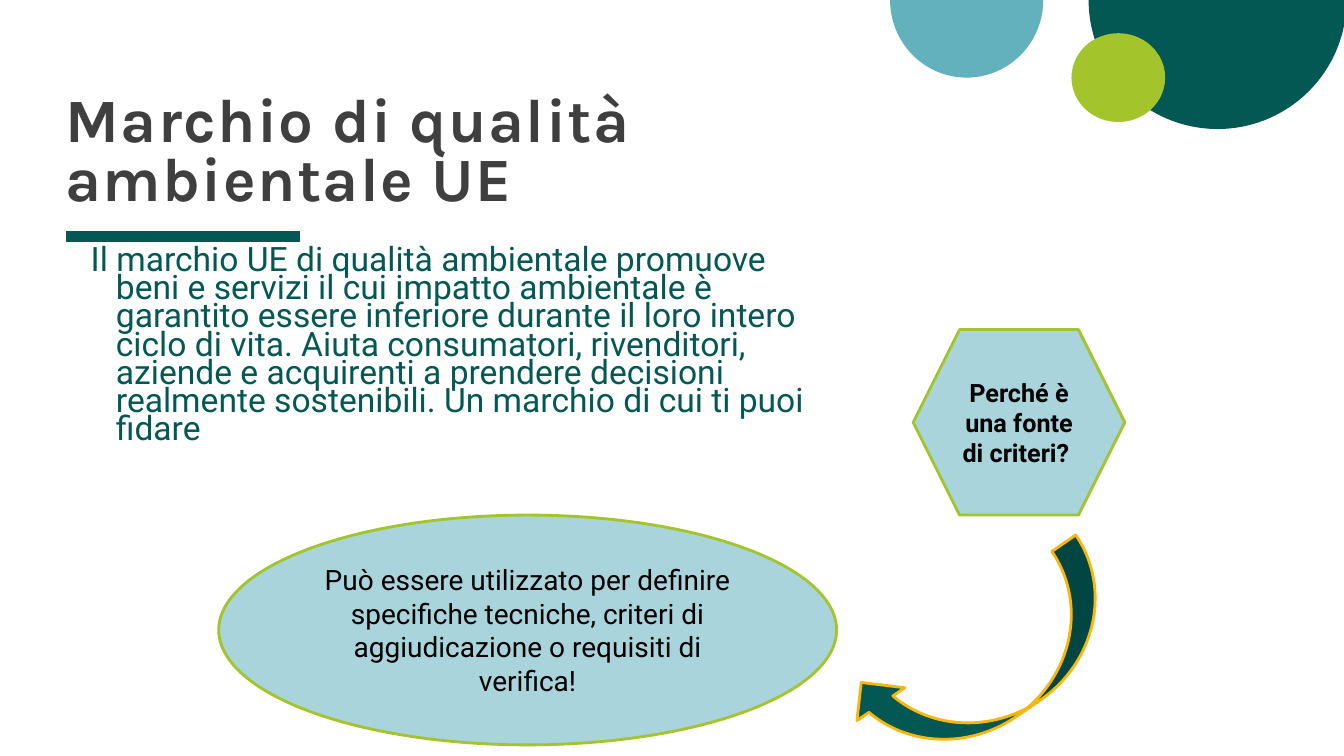
from typing import NamedTuple, Optional

from lxml import etree
from pptx import Presentation
from pptx.dml.color import RGBColor
from pptx.enum import shapes, text
from pptx.oxml import ns
from pptx.util import Pt

DARK_GREEN = RGBColor(0x03, 0x58, 0x54)
TEAL = RGBColor(0x64, 0xB1, 0xBE)
LIME = RGBColor(0xA3, 0xC4, 0x2A)
PALE_BLUE = RGBColor(0xA9, 0xD4, 0xDB)
AMBER = RGBColor(0xFA, 0xB6, 0x09)
CHARCOAL = RGBColor(0x3F, 0x3F, 0x3F)
BLACK = RGBColor(0, 0, 0)

KIND = shapes.MSO_SHAPE
HALF_DISC = (0, 108)

TITLE = "Marchio di qualità ambientale UE"
BODY = (
    "Il marchio UE di qualità ambientale promuove beni e servizi il cui impatto "
    "ambientale è garantito essere inferiore durante il loro intero ciclo di vita. "
    "Aiuta consumatori, rivenditori, aziende e acquirenti a prendere decisioni "
    "realmente sostenibili. Un marchio di cui ti puoi fidare"
)
USE = (
    "Può essere utilizzato per definire specifiche tecniche, criteri di "
    "aggiudicazione o requisiti di verifica!"
)


class Box(NamedTuple):
    left: float
    top: float
    width: float
    height: float


class Figure(NamedTuple):
    kind: KIND
    box: Box
    fill: RGBColor
    outline: Optional[RGBColor] = None
    adjustments: tuple = ()
    rotation: float = 0
    label: str = ""
    size: float = 18
    bold: bool = False


FIGURES = [
    Figure(KIND.PIE, Box(777.6, -92.16, 184.32, 184.32), DARK_GREEN, adjustments=HALF_DISC),
    Figure(KIND.PIE, Box(635.76, -55.44, 109.44, 110.88), TEAL, adjustments=HALF_DISC),
    Figure(KIND.OVAL, Box(765.36, 23.76, 66.96, 63.36), LIME),
    Figure(KIND.HEXAGON, Box(652.32, 235.44, 151.2, 132.48), PALE_BLUE, LIME,
           label="Perché è una fonte di criteri? ", bold=True),
    Figure(KIND.OVAL, Box(156.24, 367.92, 441.36, 164.16), PALE_BLUE, LIME,
           label=USE, size=20),
    Figure(KIND.CURVED_LEFT_ARROW, Box(665.28, 371.52, 82.8, 206.64), DARK_GREEN, AMBER,
           adjustments=(0.25, 0.5, 0.25), rotation=55.5),
]


def style_runs(paragraph, font_name: str, size: float, color: RGBColor, bold: bool) -> None:
    for run in paragraph.runs:
        run.font.name = font_name
        run.font.size = Pt(size)
        run.font.color.rgb = color
        run.font.bold = bold


def fill_placeholder(placeholder, box: Box, words: str, line_spacing: float,
                     anchor: text.MSO_ANCHOR, top_margin: float = 0):
    """Move the placeholder, set its text and return its paragraph."""
    placeholder.left, placeholder.top = Pt(box.left), Pt(box.top)
    placeholder.width, placeholder.height = Pt(box.width), Pt(box.height)
    frame = placeholder.text_frame
    frame.text = words
    frame.word_wrap = True
    frame.auto_size = text.MSO_AUTO_SIZE.NONE
    frame.vertical_anchor = anchor
    frame.margin_left = frame.margin_right = frame.margin_bottom = 0
    frame.margin_top = Pt(top_margin)
    paragraph = frame.paragraphs[0]
    paragraph.alignment = text.PP_ALIGN.LEFT
    paragraph.line_spacing = line_spacing
    paragraph.space_before = Pt(0)
    return paragraph


def add_title(slide) -> None:
    paragraph = fill_placeholder(slide.shapes.title, Box(46.8, 27.36, 605.52, 125.28),
                                 TITLE, 0.8, text.MSO_ANCHOR.BOTTOM)
    style_runs(paragraph, "Karla", 44, CHARCOAL, True)
    for run in paragraph.runs:
        run.font._element.set("spc", "100")


def add_body(slide) -> None:
    paragraph = fill_placeholder(slide.placeholders[1], Box(46.8, 159.84, 534.24, 188.64),
                                 BODY, 0.7, text.MSO_ANCHOR.TOP, top_margin=18)
    properties = paragraph._p.get_or_add_pPr()
    properties.set("marL", str(Pt(36)))
    properties.set("indent", str(Pt(-18)))
    etree.SubElement(properties, ns.qn("a:buNone"))
    style_runs(paragraph, "Roboto", 24, DARK_GREEN, False)


def add_title_rule(slide) -> None:
    rule = slide.shapes.add_connector(shapes.MSO_CONNECTOR.STRAIGHT,
                                      Pt(46.8), Pt(169.2), Pt(214.56), Pt(169.2))
    rule.line.color.rgb = DARK_GREEN
    rule.line.width = Pt(8)
    etree.SubElement(rule._element.spPr, ns.qn("a:effectLst"))


def add_figure(slide, figure: Figure) -> None:
    shape = slide.shapes.add_shape(figure.kind, *map(Pt, figure.box))
    shape.shadow.inherit = False
    shape.rotation = figure.rotation
    for index, value in enumerate(figure.adjustments):
        shape.adjustments[index] = value
    shape.fill.solid()
    shape.fill.fore_color.rgb = figure.fill
    if figure.outline is None:
        shape.line.fill.background()
    else:
        shape.line.color.rgb = figure.outline
        shape.line.width = Pt(2)
    if figure.label:
        frame = shape.text_frame
        frame.text = figure.label
        frame.word_wrap = True
        frame.vertical_anchor = text.MSO_ANCHOR.MIDDLE
        paragraph = frame.paragraphs[0]
        paragraph.alignment = text.PP_ALIGN.CENTER
        style_runs(paragraph, "Roboto", figure.size, BLACK, figure.bold)


def main() -> None:
    presentation = Presentation()
    presentation.slide_width, presentation.slide_height = Pt(960), Pt(540)
    slide = presentation.slides.add_slide(presentation.slide_layouts[1])
    add_title(slide)
    add_body(slide)
    add_title_rule(slide)
    for figure in FIGURES:
        add_figure(slide, figure)
    presentation.save("out.pptx")


if __name__ == "__main__":
    main()
